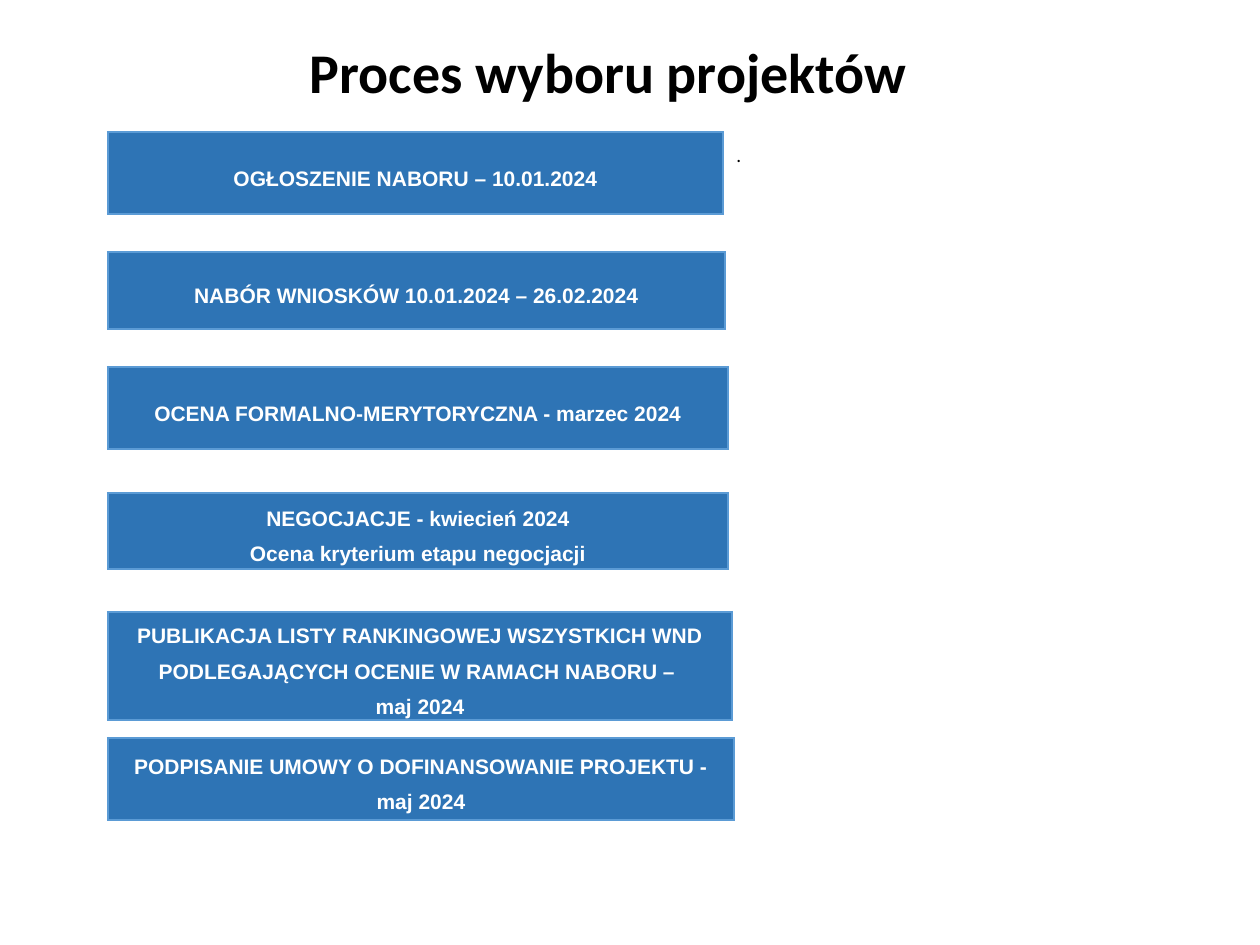
"""Build a slide listing the steps of a project selection process."""
from lxml import etree
from pptx import Presentation
from pptx.dml.color import RGBColor
from pptx.enum.text import MSO_ANCHOR, PP_ALIGN
from pptx.oxml.ns import qn
from pptx.util import Pt

MIDDLE, CENTER, LEFT = MSO_ANCHOR.MIDDLE, PP_ALIGN.CENTER, PP_ALIGN.LEFT
PX = 914400 // 126

THEME = {
    "fill": "2E74B5", "edge": "5B9BD5", "light": "FFFFFF", "dark": "000000",
    "head": ("Calibri", 32), "body": ("Arial", 12), "note": ("Calibri", 11),
    "border": 1.5, "inset": 9,
}
TITLE = "Proces wyboru projektów"
TITLE_BOX = (297, 19, 876, 112)
START = 108
STEPS = [
    (132, 82, (615, 154), ["OGŁOSZENIE NABORU – 10.01.2024", " ."]),
    (252, 77, (617, 197), ["NABÓR WNIOSKÓW 10.01.2024 – 26.02.2024"]),
    (367, 82, (620, 149), ["OCENA FORMALNO-MERYTORYCZNA - marzec 2024"]),
    (493, 76, (620, 23), ["NEGOCJACJE - kwiecień 2024\vOcena kryterium etapu negocjacji"]),
    (612, 108, (624,), ["PUBLIKACJA LISTY RANKINGOWEJ WSZYSTKICH WND "
                        "PODLEGAJĄCYCH OCENIE W RAMACH NABORU – \vmaj 2024"]),
    (738, 82, (626, 33), ["PODPISANIE UMOWY O DOFINANSOWANIE PROJEKTU - maj 2024"]),
]


def style(para, kind, color, bold, align, space):
    para.alignment, para.line_spacing = align, space
    font = para.font
    font.name, size = THEME[kind]
    font.size, font.bold = Pt(size), bold
    font.color.rgb = RGBColor.from_string(THEME[color])


def add_edges(cell, sides):
    props = cell._tc.get_or_add_tcPr()
    for spot, side in enumerate(sides):
        line = etree.Element(qn(f"a:ln{side}"), w=str(Pt(THEME["border"])))
        fill = etree.SubElement(line, qn("a:solidFill"))
        etree.SubElement(fill, qn("a:srgbClr"), val=THEME["edge"])
        props.insert(spot, line)


def fill_cell(cell, text, main):
    cell.margin_left = cell.margin_right = THEME["inset"] * PX
    cell.margin_top = cell.margin_bottom = 0
    para = cell.text_frame.paragraphs[0]
    para.text = text
    if main:
        cell.vertical_anchor = MIDDLE
        cell.fill.solid()
        cell.fill.fore_color.rgb = RGBColor.from_string(THEME["fill"])
        style(para, "body", "light", True, CENTER, 1.5)
    else:
        cell.fill.background()
        style(para, "note", "dark", False, LEFT, 1.5)
    add_edges(cell, "LRTB" if main else "L")


def add_step(slide, top, height, widths, texts):
    frame = slide.shapes.add_table(
        1, len(widths), START * PX, top * PX, sum(widths) * PX, height * PX)
    table = frame.table
    table.first_row = table.horz_banding = False
    for col, width in enumerate(widths):
        table.columns[col].width = width * PX
        text = texts[col] if col < len(texts) else ""
        fill_cell(table.cell(0, col), text, col == 0)


def main():
    deck = Presentation()
    deck.slide_width, deck.slide_height = 1260 * PX, 945 * PX
    slide = deck.slides.add_slide(deck.slide_layouts[5])
    title = slide.shapes.title
    title.left, title.top, title.width, title.height = (n * PX for n in TITLE_BOX)
    title.text = TITLE
    title.text_frame.vertical_anchor = MIDDLE
    style(title.text_frame.paragraphs[0], "head", "dark", True, LEFT, 0.9)
    for step in STEPS:
        add_step(slide, *step)
    deck.save("out.pptx")


if __name__ == "__main__":
    main()
